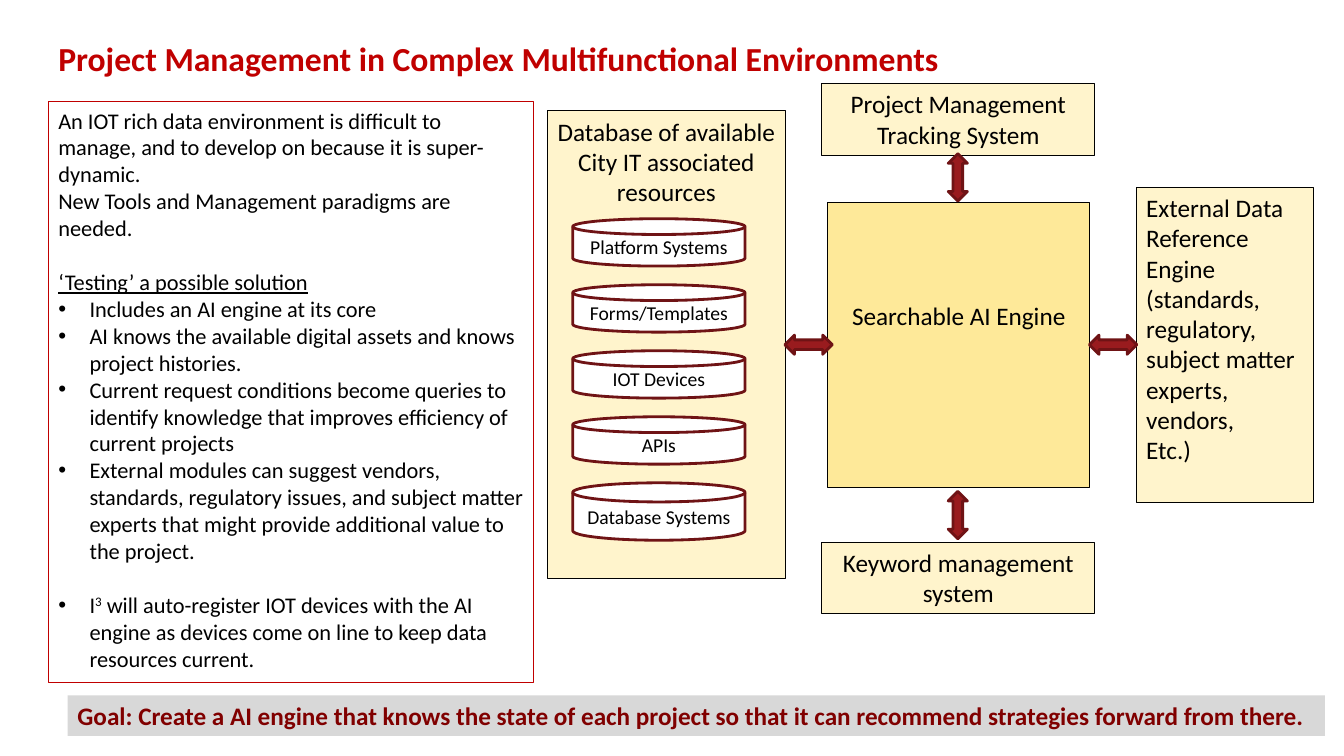
import dataclasses
import typing

import lxml.etree
import pptx
import pptx.dml.color
import pptx.enum.shapes
import pptx.enum.text
import pptx.oxml.ns
import pptx.util

Inches = pptx.util.Inches
Pt = pptx.util.Pt
Kind = pptx.enum.shapes.MSO_SHAPE
Align = pptx.enum.text.PP_ALIGN
Anchor = pptx.enum.text.MSO_ANCHOR

HUES = {
    "black": "000000", "white": "FFFFFF", "cream": "FFF4CC", "gold": "FEE999",
    "red": "C00000", "brick": "991B1E", "dark": "6F1315",
    "maroon": "800000", "grey": "D8D8D8",
}


@dataclasses.dataclass
class Para:
    text: str
    bullet: bool = False
    under: bool = False
    gap: float = 0  # space before, points
    power: str = ""  # raised text after the first letter


@dataclasses.dataclass
class Box:
    spot: tuple[float, float, float, float]
    paras: list[Para] = dataclasses.field(default_factory=list)
    kind: int = Kind.RECTANGLE
    fill: typing.Optional[str] = "cream"
    line: typing.Optional[str] = "black"
    width: float = 0.75
    size: float = 18
    hue: str = "black"
    bold: bool = False
    align: int = Align.CENTER
    anchor: int = Anchor.TOP
    top: float = 0.05  # top inset
    turn: float = 0


def rgb(name: str) -> pptx.dml.color.RGBColor:
    return pptx.dml.color.RGBColor.from_string(HUES[name])


def apply(target: typing.Any, values: dict[str, typing.Any]) -> None:
    for name, value in values.items():
        setattr(target, name, value)


def add_dot(line: typing.Any) -> None:
    props = line._p.get_or_add_pPr()
    props.set("marL", str(Inches(0.31)))
    props.set("indent", str(-Inches(0.31)))
    qn = pptx.oxml.ns.qn
    lxml.etree.SubElement(props, qn("a:buFont")).set("typeface", "Arial")
    lxml.etree.SubElement(props, qn("a:buChar")).set("char", "•")


def write(frame: typing.Any, box: Box) -> None:
    apply(frame, {
        "word_wrap": True, "vertical_anchor": box.anchor,
        "margin_left": Inches(0.1), "margin_right": Inches(0.1),
        "margin_top": Inches(box.top), "margin_bottom": Inches(0.05),
    })
    for i, para in enumerate(box.paras):
        line = frame.add_paragraph() if i else frame.paragraphs[0]
        line.alignment = box.align
        if para.gap:
            line.space_before = Pt(para.gap)
        if para.bullet:
            add_dot(line)
        parts = [para.text]
        if para.power:
            parts = [para.text[0], para.power, para.text[1:]]
        for k, part in enumerate(parts):
            run = line.add_run()
            run.text = part
            apply(run.font, {"name": "Calibri", "size": Pt(box.size),
                             "bold": box.bold, "underline": para.under})
            run.font.color.rgb = rgb(box.hue)
            if k == 1:
                run._r.get_or_add_rPr().set("baseline", "30000")


def draw(slide: typing.Any, box: Box) -> None:
    shape = slide.shapes.add_shape(box.kind, *map(Inches, box.spot))
    shape.shadow.inherit = False
    shape.rotation = box.turn
    if box.fill:
        shape.fill.solid()
        shape.fill.fore_color.rgb = rgb(box.fill)
    else:
        shape.fill.background()
    if box.line:
        shape.line.color.rgb = rgb(box.line)
        shape.line.width = Pt(box.width)
    else:
        shape.line.fill.background()
    write(shape.text_frame, box)


def disk(row: int, name: str, high: float = 0.47) -> Box:
    return Box((5.68, 2.17 + 0.655 * row, 1.71, high), [Para(name)],
               Kind.FLOWCHART_MAGNETIC_DISK, "white", "dark", 2, 14,
               anchor=Anchor.MIDDLE)


def arrow(mid_x: float, mid_y: float, turn: float = 0) -> Box:
    wide, high = 0.47, 0.19
    return Box((mid_x - wide / 2, mid_y - high / 2, wide, high),
               kind=Kind.LEFT_RIGHT_ARROW, fill="brick", line="dark",
               width=2, turn=turn)


NOTES = [
    Para("An IOT rich data environment is difficult to manage, and to develop "
         "on because it is super-dynamic."),
    Para("New Tools and Management paradigms are needed."),
    Para("‘Testing’ a possible solution", under=True, gap=19.5),
    Para("Includes an AI engine at its core", True),
    Para("AI knows the available digital assets and knows project histories.", True),
    Para("Current request conditions become queries to identify knowledge that "
         "improves efficiency of current projects", True),
    Para("External modules can suggest vendors, standards, regulatory issues, "
         "and subject matter experts that might provide additional value to "
         "the project.", True),
    Para("I will auto-register IOT devices with the AI engine as devices come "
         "on line to keep data resources current.", True, gap=19.5, power="3"),
]
SOURCE = [
    Para("External Data Reference Engine"),
    Para("(standards, regulatory, subject matter experts, vendors,"),
    Para("Etc.)"),
]
DISKS = ["Platform Systems", "Forms/Templates", "IOT Devices", "APIs"]

BOXES = [
    # Data store and its disks
    Box((5.43, 1.1, 2.36, 4.64),
        [Para("Database of available City IT associated resources")]),
    *[disk(row, name) for row, name in enumerate(DISKS)],
    disk(len(DISKS), "Database Systems", 0.57),
    # Engine and the systems around it
    Box((8.15, 0.83, 2.71, 0.71), [Para("Project Management Tracking System")]),
    Box((8.15, 5.38, 2.71, 0.71), [Para("Keyword management system")]),
    Box((8.21, 2.01, 2.6, 2.83), [Para("Searchable AI Engine")],
        fill="gold", top=0.97),
    Box((11.27, 1.86, 1.76, 3.13), SOURCE, align=Align.LEFT),
    # Arrows
    arrow(11.04, 3.42),
    arrow(8.02, 3.42),
    arrow(9.5, 5.11, 90),
    arrow(9.5, 1.76, 90),
    # Notes and goal
    Box((0.48, 1.01, 4.81, 5.76), NOTES, fill=None, line="red", size=16,
        align=Align.LEFT),
    Box((0.67, 6.9, 12.47, 0.4),
        [Para("Goal: Create a AI engine that knows the state of each project so "
              "that it can recommend strategies forward from there.")],
        fill="grey", line=None, hue="maroon", bold=True, align=Align.LEFT),
]
TITLE = Box((0.48, 0.18, 11.5, 0.8),
            [Para("Project Management in Complex Multifunctional Environments")],
            size=24, hue="red", bold=True, align=Align.LEFT, anchor=Anchor.MIDDLE)


def main() -> None:
    deck = pptx.Presentation()
    apply(deck, {"slide_width": Inches(13.33), "slide_height": Inches(7.5)})
    slide = deck.slides.add_slide(deck.slide_layouts[6])
    for box in BOXES:
        draw(slide, box)
    # Title
    title = slide.shapes.add_textbox(*map(Inches, TITLE.spot))
    write(title.text_frame, TITLE)
    deck.save("out.pptx")


if __name__ == "__main__":
    main()
